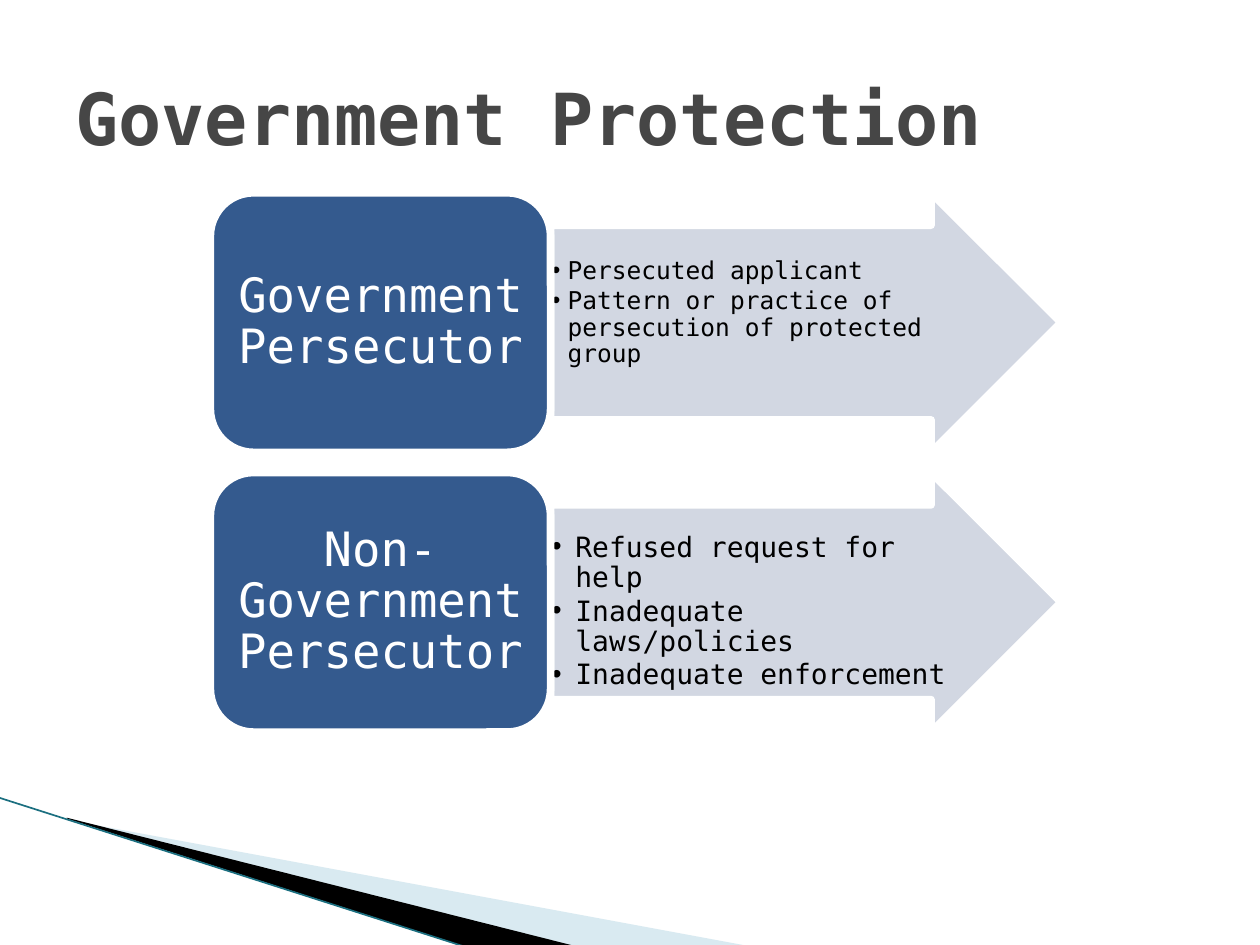
from lxml import etree
from pptx import Presentation, util as u
from pptx.dml.color import RGBColor
from pptx.enum import shapes, text
from pptx.oxml.ns import qn

FONT = "DejaVu Sans Mono"
WIDTH, HEIGHT = u.Inches(10), u.Inches(7.5)

# Rows of the diagram: label, points, text size, hanging indent (pt), space above (pt)
ROWS = [
    ("Government Persecutor",
     ["Persecuted applicant",
      "Pattern or practice of persecution of protected group"], 14, 9, 19),
    ("Non-Government Persecutor",
     ["Refused request for help", "Inadequate laws/policies",
      "Inadequate enforcement"], 16, 13.5, 16),
]
ROW_TOP, ROW_STEP, ROW_HEIGHT = 20.4, 29.6, 27.47
LABEL_LEFT, LABEL_WIDTH, ARROW_WIDTH = 16.7, 27, 40.5


def across(percent):
    return u.Emu(round(WIDTH * percent / 100))


def down(percent):
    return u.Emu(round(HEIGHT * percent / 100))


def area(left, top, width, height):
    return across(left), down(top), across(width), down(height)


def rgb(value):
    return RGBColor.from_string(value)


def set_fill(s, color, opacity=100):
    s.shadow.inherit = False
    s.fill.solid()
    s.fill.fore_color.rgb = rgb(color)
    if opacity < 100:
        clr = s.fill._xPr.find(".//" + qn("a:srgbClr"))
        etree.SubElement(clr, qn("a:alpha"), val=str(opacity * 1000))


def add_bullet(p, indent):
    pPr = p._p.get_or_add_pPr()
    pPr.set("marL", str(u.Pt(indent)))
    pPr.set("indent", str(-u.Pt(indent)))
    etree.SubElement(pPr, qn("a:buFont"), typeface="Arial")
    etree.SubElement(pPr, qn("a:buChar"), char="•")


def write(s, lines, size, color, bold=False, align=text.PP_ALIGN.LEFT,
          anchor=text.MSO_ANCHOR.MIDDLE, insets=(7.2, 3.6, 7.2, 3.6),
          spacing=0.9, after=0, indent=None):
    """Fill a shape with one paragraph per line; insets are left, top, right, bottom."""
    tf = s.text_frame
    tf.word_wrap = True
    tf.vertical_anchor = anchor
    (tf.margin_left, tf.margin_top,
     tf.margin_right, tf.margin_bottom) = map(u.Pt, insets)
    for i, line in enumerate(lines):
        p = tf.paragraphs[0] if i == 0 else tf.add_paragraph()
        p.alignment = align
        p.line_spacing = spacing
        p.space_after = u.Pt(after)
        if indent:
            add_bullet(p, indent)
        r = p.add_run()
        r.text = line
        r.font.name, r.font.size, r.font.bold = FONT, u.Pt(size), bold
        r.font.color.rgb = rgb(color)


def add_wedge(slide, points, color, opacity=100):
    corners = [(across(x), down(y)) for x, y in points]
    builder = slide.shapes.build_freeform(*corners[0])
    builder.add_line_segments(corners[1:], close=True)
    s = builder.convert_to_shape()
    set_fill(s, color, opacity)
    s.line.fill.background()


def add_edge(slide, start, end, color, width):
    s = slide.shapes.add_connector(
        shapes.MSO_CONNECTOR.STRAIGHT, across(start[0]), down(start[1]),
        across(end[0]), down(end[1]))
    s.line.color.rgb = rgb(color)
    s.line.width = u.Pt(width)
    etree.SubElement(s._element.spPr, qn("a:effectLst"))


def add_block(slide, kind, box, color, opacity=100):
    s = slide.shapes.add_shape(kind, *area(*box))
    set_fill(s, color, opacity)
    s.line.color.rgb = rgb("FFFFFF")
    s.line.width = u.Pt(4.33)
    return s


def add_row(slide, top, label, points, size, indent, space_above):
    arrow = add_block(slide, shapes.MSO_SHAPE.RIGHT_ARROW,
                      (LABEL_LEFT + LABEL_WIDTH, top, ARROW_WIDTH, ROW_HEIGHT),
                      "CED3DF", 90)
    arrow.adjustments[0], arrow.adjustments[1] = 0.75, 0.5
    write(arrow, points, size, "000000", anchor=text.MSO_ANCHOR.TOP,
          insets=(0.7, space_above, 0.7, 0.7), after=2, indent=indent)
    box = add_block(slide, shapes.MSO_SHAPE.ROUNDED_RECTANGLE,
                    (LABEL_LEFT, top, LABEL_WIDTH, ROW_HEIGHT), "345A8E")
    write(box, [label], 27, "FFFFFF", align=text.PP_ALIGN.CENTER,
          insets=(8, 4, 8, 4))


def add_title(slide, title):
    s = slide.shapes.add_textbox(*area(5, 4, 90, 16.67))
    write(s, [title], 41, "464646", bold=True, spacing=1)


def main():
    prs = Presentation()
    prs.slide_width, prs.slide_height = WIDTH, HEIGHT
    slide = prs.slides.add_slide(prs.slide_layouts[6])
    add_wedge(slide, [(5.5, 86.8), (59.5, 100.13), (45.6, 100.13), (5.5, 86.67)],
              "A0CBDC", 40)
    add_wedge(slide, [(5.3, 86.53), (45.7, 100.13), (37.2, 100.27), (5.4, 86.67)],
              "000000")
    add_edge(slide, (-0.1, 84.4), (37.1, 100.27), "1B6F80", 0.95)
    add_title(slide, "Government Protection")
    for i, row in enumerate(ROWS):
        add_row(slide, ROW_TOP + i * ROW_STEP, *row)
    prs.save("out.pptx")


if __name__ == "__main__":
    main()
